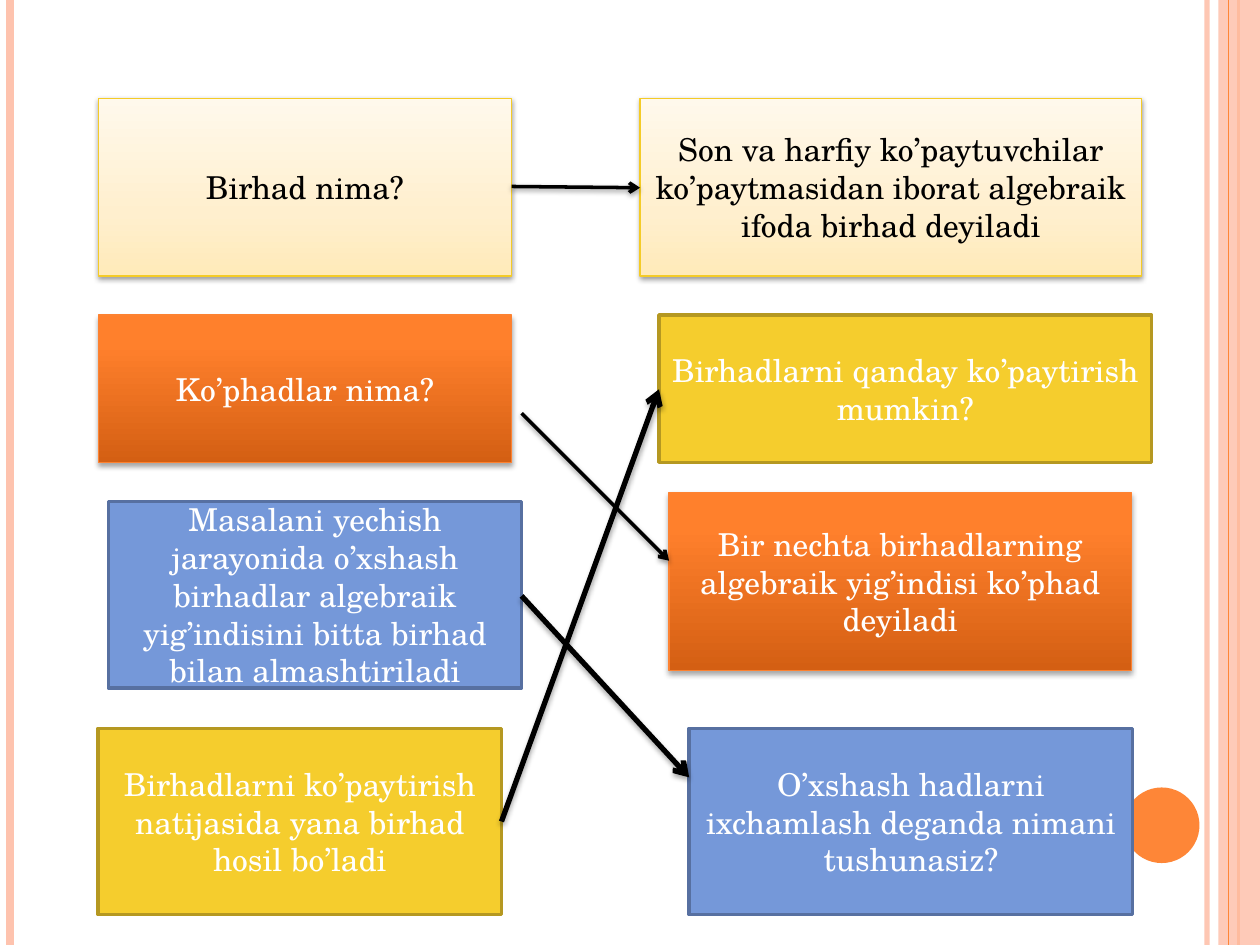
import pptx
import pptx.util
from pptx.dml.color import RGBColor
from pptx.enum.shapes import MSO_CONNECTOR, MSO_SHAPE
from pptx.enum.text import MSO_ANCHOR, PP_ALIGN
from pptx.oxml.ns import qn
from pptx.util import Inches, Pt
from lxml import etree

FONT = "TeX Gyre Schola"
COLORS = {
    "pink": "FEC3AE", "orange": "FE8637", "black": "000000", "white": "FFFFFF",
    "blue": "7598D9", "blue_edge": "5770A1",
    "yellow": "F5CD2D", "yellow_edge": "B59821",
    "cream_edge": "F4CB27", "flame_edge": "FD8231",
}
SOFT = (38, 1.6)
STRONG = (35, 1.8)
STYLES = {
    "cream": dict(fill=[(0, "FFEAB9"), (35, "FFEFCE"), (100, "FFF9EC")],
                  edge="cream_edge", width=0.75, text="black", shadow=SOFT),
    "flame": dict(fill=[(0, "D45F13"), (80, "FF802C"), (100, "FF812E")],
                  edge="flame_edge", width=0.75, text="white", shadow=STRONG),
    "blue": dict(fill="blue", edge="blue_edge", width=2, text="white", shadow=None),
    "yellow": dict(fill="yellow", edge="yellow_edge", width=2, text="white", shadow=None),
}


def rgb(name):
    return RGBColor.from_string(COLORS[name])


def sub(parent, tag, **attrs):
    el = etree.SubElement(parent, qn(tag))
    for key, value in attrs.items():
        el.set(key, str(value))
    return el


def set_alpha(el, percent):
    sub(el.find(".//" + qn("a:srgbClr")), "a:alpha", val=percent * 1000)


def add_shadow(effects, alpha, dist):
    shadow = sub(effects, "a:outerShdw", blurRad=Pt(3.1), dist=Pt(dist),
                 dir=90 * 60000, rotWithShape=0)
    sub(shadow, "a:srgbClr", val=COLORS["black"])
    set_alpha(shadow, alpha)


def add_line(s, start, end, color, width, shadow=None):
    line = s.shapes.add_connector(MSO_CONNECTOR.STRAIGHT,
                                  *map(Inches, start + end))
    line.line.color.rgb = rgb(color)
    line.line.width = Pt(width)
    effects = sub(line._element.spPr, "a:effectLst")
    if shadow:
        add_shadow(effects, *shadow)
    return line


def add_arrow(s, start, end, width, shadow):
    arrow = add_line(s, start, end, "black", width, shadow)
    sub(arrow.line._get_or_add_ln(), "a:tailEnd", type="arrow")


def add_plain(s, kind, box, color):
    sp = s.shapes.add_shape(kind, *map(Inches, box))
    sp.shadow.inherit = False
    sp.fill.solid()
    sp.fill.fore_color.rgb = rgb(color)
    sp.line.fill.background()
    return sp


def set_gradient(sp, stops):
    sp.fill.gradient()
    sp.fill.gradient_angle = 90
    gs_list = sp._element.spPr.find(".//" + qn("a:gsLst"))
    for old in list(gs_list):
        gs_list.remove(old)
    for pos, color in stops:
        sub(sub(gs_list, "a:gs", pos=pos * 1000), "a:srgbClr", val=color)


def add_card(s, box, style, text):
    look = STYLES[style]
    sp = s.shapes.add_shape(MSO_SHAPE.RECTANGLE, *map(Inches, box))
    if isinstance(look["fill"], list):
        set_gradient(sp, look["fill"])
    else:
        sp.fill.solid()
        sp.fill.fore_color.rgb = rgb(look["fill"])
    sp.line.color.rgb = rgb(look["edge"])
    sp.line.width = Pt(look["width"])
    sp.shadow.inherit = False
    if look["shadow"]:
        add_shadow(sp._element.spPr.find(qn("a:effectLst")), *look["shadow"])
    tf = sp.text_frame
    tf.word_wrap = True
    tf.vertical_anchor = MSO_ANCHOR.MIDDLE
    tf.text = text
    p = tf.paragraphs[0]
    p.alignment = PP_ALIGN.CENTER
    font = p.runs[0].font
    font.name, font.size = FONT, Pt(18)
    font.color.rgb = rgb(look["text"])


def add_frame(s):
    inner = add_line(s, (9.58, 0), (9.58, 7.5), "pink", 3)
    set_alpha(inner._element.spPr, 93)
    for x, color, width in [(0.08, "pink", 4.5), (9.83, "orange", 1.5)]:
        add_line(s, (x, 0), (x, 7.5), color, width)
    band = add_plain(s, MSO_SHAPE.RECTANGLE, (9.67, 0, 0.33, 7.5), "pink")
    set_alpha(band._element.spPr, 87)
    add_line(s, (9.75, 0), (9.75, 7.5), "orange", 0.75)
    add_plain(s, MSO_SHAPE.OVAL, (8.92, 6.25, 0.6, 0.6), "orange")


def main():
    prs = pptx.Presentation()
    prs.slide_width, prs.slide_height = Inches(10), Inches(7.5)
    s = prs.slides.add_slide(prs.slide_layouts[6])
    add_frame(s)

    cards = [
        ((0.78, 0.78, 3.28, 1.41), "cream", "Birhad nima?"),
        ((0.78, 2.5, 3.28, 1.17), "flame", "Ko’phadlar nima?"),
        ((0.86, 3.98, 3.28, 1.48), "blue",
         "Masalani yechish jarayonida o’xshash birhadlar algebraik "
         "yig’indisini bitta birhad bilan almashtiriladi"),
        ((0.78, 5.78, 3.2, 1.48), "yellow",
         "Birhadlarni ko’paytirish natijasida yana birhad hosil bo’ladi"),
        ((5.08, 0.78, 3.98, 1.41), "cream",
         "Son va harfiy ko’paytuvchilar ko’paytmasidan iborat "
         "algebraik ifoda birhad deyiladi"),
        ((5.23, 2.5, 3.91, 1.17), "yellow",
         "Birhadlarni qanday ko’paytirish mumkin?"),
        ((5.31, 3.91, 3.67, 1.41), "flame",
         "Bir nechta birhadlarning algebraik yig’indisi ko’phad deyiladi"),
        ((5.47, 5.78, 3.52, 1.48), "blue",
         "O’xshash hadlarni ixchamlash deganda nimani tushunasiz?"),
    ]
    for box, style, text in cards:
        add_card(s, box, style, text)

    arrows = [
        ((4.06, 1.48), (5.08, 1.49), 2, SOFT),
        ((4.14, 3.28), (5.31, 4.45), 2, SOFT),
        ((4.14, 4.73), (5.47, 6.17), 3, STRONG),
        ((3.98, 6.52), (5.23, 3.09), 3, STRONG),
    ]
    for start, end, width, shadow in arrows:
        add_arrow(s, start, end, width, shadow)
    prs.save("out.pptx")


if __name__ == "__main__":
    main()
